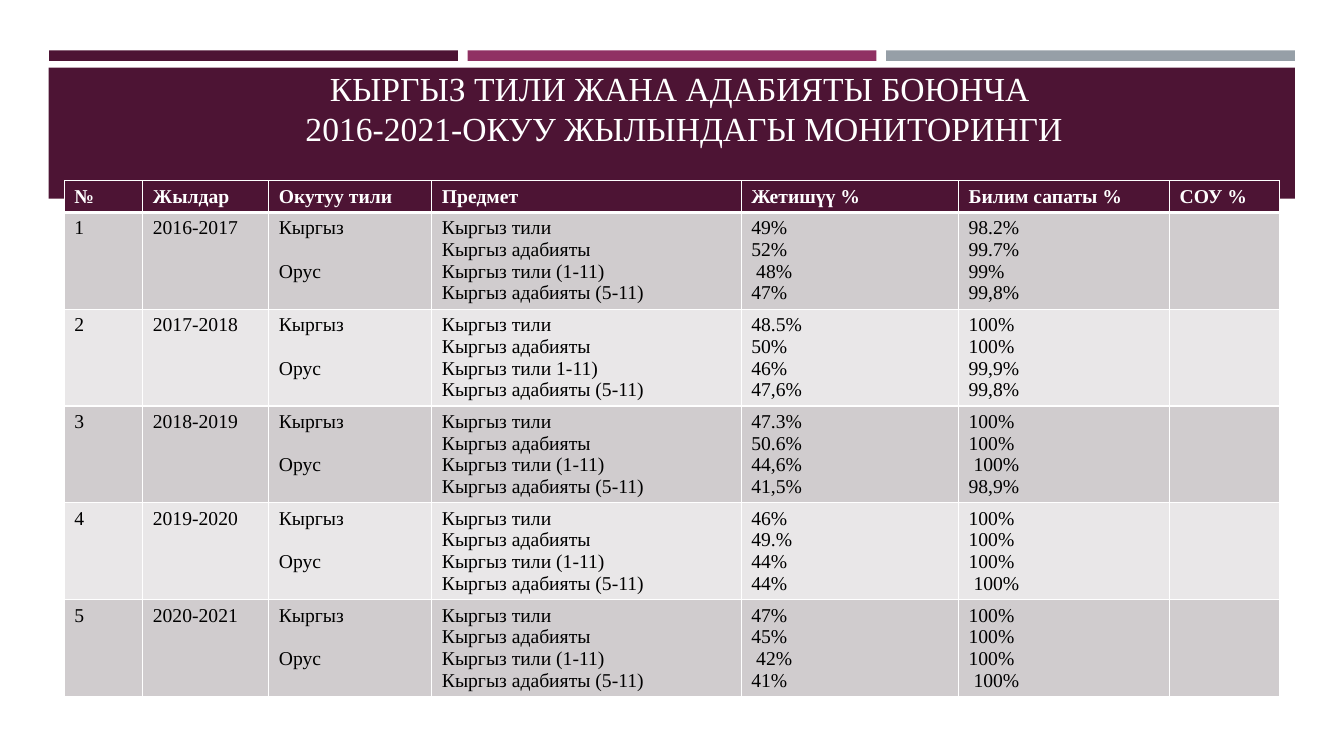
"""Builds the monitoring slide for Kyrgyz language and literature."""
import pptx
import pptx.dml.color
import pptx.enum.shapes
import pptx.enum.text
import pptx.oxml
import pptx.oxml.ns
import pptx.util

Pt = pptx.util.Pt
RGBColor = pptx.dml.color.RGBColor
PLUM = RGBColor(0x4D, 0x14, 0x34)
BERRY = RGBColor(0x90, 0x31, 0x63)
SLATE = RGBColor(0x96, 0x9F, 0xA7)
DARK_BAND = RGBColor(0xD0, 0xCC, 0xCE)
LIGHT_BAND = RGBColor(0xE9, 0xE7, 0xE8)
WHITE = RGBColor(0xFF, 0xFF, 0xFF)
BLACK = RGBColor(0, 0, 0)

TITLE = ["КЫРГЫЗ ТИЛИ ЖАНА АДАБИЯТЫ БОЮНЧА ", "2016-2021-ОКУУ ЖЫЛЫНДАГЫ МОНИТОРИНГИ"]
HEADINGS = ["№", "Жылдар", "Окутуу тили", "Предмет", "Жетишүү %", "Билим сапаты %", "СОУ %"]
COLUMN_WIDTHS = [56, 90, 116.5, 221, 155.25, 150.75, 78.5]
LANGUAGES = ["Кыргыз", "Орус"]
SUBJECTS = ["Кыргыз тили", "Кыргыз адабияты", "Кыргыз тили (1-11)", "Кыргыз адабияты (5-11)"]
SUBJECTS_2017 = SUBJECTS[:2] + ["Кыргыз тили 1-11)"] + SUBJECTS[3:]
RESULTS = [
    ("2016-2017", SUBJECTS, ["49%", "52%", " 48%", "47%"], ["98.2%", "99.7%", "99%", "99,8%"]),
    ("2017-2018", SUBJECTS_2017, ["48.5%", "50%", "46%", "47,6%"], ["100%", "100%", "99,9%", "99,8%"]),
    ("2018-2019", SUBJECTS, ["47.3%", "50.6%", "44,6%", "41,5%"], ["100%", "100%", " 100%", "98,9%"]),
    ("2019-2020", SUBJECTS, ["46%", "49.%", "44%", "44%"], ["100%", "100%", "100%", " 100%"]),
    ("2020-2021", SUBJECTS, ["47%", "45%", " 42%", "41%"], ["100%", "100%", "100%", " 100%"]),
]


class SlideBuilder:
    """Holds the style and the current slide."""

    font_name = "Times New Roman"
    title_size = 24
    table_size = 14
    line_height = 15.5

    def __init__(self, page):
        """Keep the slide to draw on."""
        self.page = page

    def set_font(self, paragraph, size, color, bold=False):
        """Format one whole paragraph."""
        paragraph.font.name = self.font_name
        paragraph.font.size = Pt(size)
        paragraph.font.bold = bold
        paragraph.font.color.rgb = color

    def bar(self, left, top, width, height, color):
        """Draw a plain filled rectangle."""
        shape = self.page.shapes.add_shape(
            pptx.enum.shapes.MSO_SHAPE.RECTANGLE, Pt(left), Pt(top), Pt(width), Pt(height))
        shape.shadow.inherit = False
        shape.fill.solid()
        shape.fill.fore_color.rgb = color
        shape.line.fill.background()

    def title(self, lines, left, top, width, height):
        """Place the title above the shapes drawn so far."""
        box = self.page.shapes.title
        box.left, box.top, box.width, box.height = Pt(left), Pt(top), Pt(width), Pt(height)
        frame = box.text_frame
        frame.word_wrap = True
        frame.auto_size = pptx.enum.text.MSO_AUTO_SIZE.NONE
        frame.vertical_anchor = pptx.enum.text.MSO_ANCHOR.BOTTOM
        paragraph = frame.paragraphs[0]
        paragraph.alignment = pptx.enum.text.PP_ALIGN.CENTER
        self.set_font(paragraph, self.title_size, WHITE)
        for index, line in enumerate(lines):
            if index:
                paragraph.add_line_break()
            paragraph.add_run().text = line
        box._element.getparent().append(box._element)

    def borders(self, cell, top, bottom):
        """Give a cell white borders."""
        properties = cell._tc.get_or_add_tcPr()
        for side, width in (("L", 1), ("R", 1), ("T", top), ("B", bottom)):
            properties.append(pptx.oxml.parse_xml(
                f'<a:ln{side} {pptx.oxml.ns.nsdecls("a")} w="{Pt(width)}">'
                f'<a:solidFill><a:srgbClr val="{WHITE}"/></a:solidFill></a:ln{side}>'))

    def cell(self, cell, lines, fill, color, bold, gap):
        """Fill a cell with one paragraph per line."""
        cell.fill.solid()
        cell.fill.fore_color.rgb = fill
        frame = cell.text_frame
        for index, line in enumerate(lines):
            paragraph = frame.add_paragraph() if index else frame.paragraphs[0]
            paragraph.text = line
            self.set_font(paragraph, self.table_size, color, bold)
            if index and gap:
                paragraph.space_before = Pt(gap)

    def table(self, rows, left, top, widths, header_height, row_height):
        """Draw a table with a header row and banded rows."""
        height = header_height + row_height * (len(rows) - 1)
        table = self.page.shapes.add_table(
            len(rows), len(widths), Pt(left), Pt(top), Pt(sum(widths)), Pt(height)).table
        table.first_row = table.horz_banding = False
        for column, width in zip(table.columns, widths):
            column.width = Pt(width)
        for number, values in enumerate(rows):
            header = number == 0
            table.rows[number].height = Pt(header_height if header else row_height)
            fill = PLUM if header else (DARK_BAND if number % 2 else LIGHT_BAND)
            for column, lines in enumerate(values):
                cell = table.cell(number, column)
                self.borders(cell, 3 if number == 1 else 1, 3 if header else 1)
                gap = self.line_height if lines is LANGUAGES else 0
                self.cell(cell, lines, fill, WHITE if header else BLACK, header, gap)


def main():
    """Build and save the deck."""
    deck = pptx.Presentation()
    deck.slide_width, deck.slide_height = Pt(960), Pt(540)
    builder = SlideBuilder(deck.slides.add_slide(deck.slide_layouts[5]))
    for index, color in enumerate((PLUM, BERRY, SLATE)):
        builder.bar(35 + 299 * index, 36, 292, 7.5, color)
    builder.bar(34.75, 48.25, 890.25, 93.75, PLUM)
    builder.title(TITLE, 41, 0, 895, 109.5)
    rows = [[[heading] for heading in HEADINGS]]
    for number, (years, subjects, progress, quality) in enumerate(RESULTS, 1):
        rows.append([[str(number)], [years], LANGUAGES, subjects, progress, quality, [""]])
    builder.table(rows, 46, 129, COLUMN_WIDTHS, 22.75, 69.1)
    deck.save("out.pptx")


if __name__ == "__main__":
    main()
